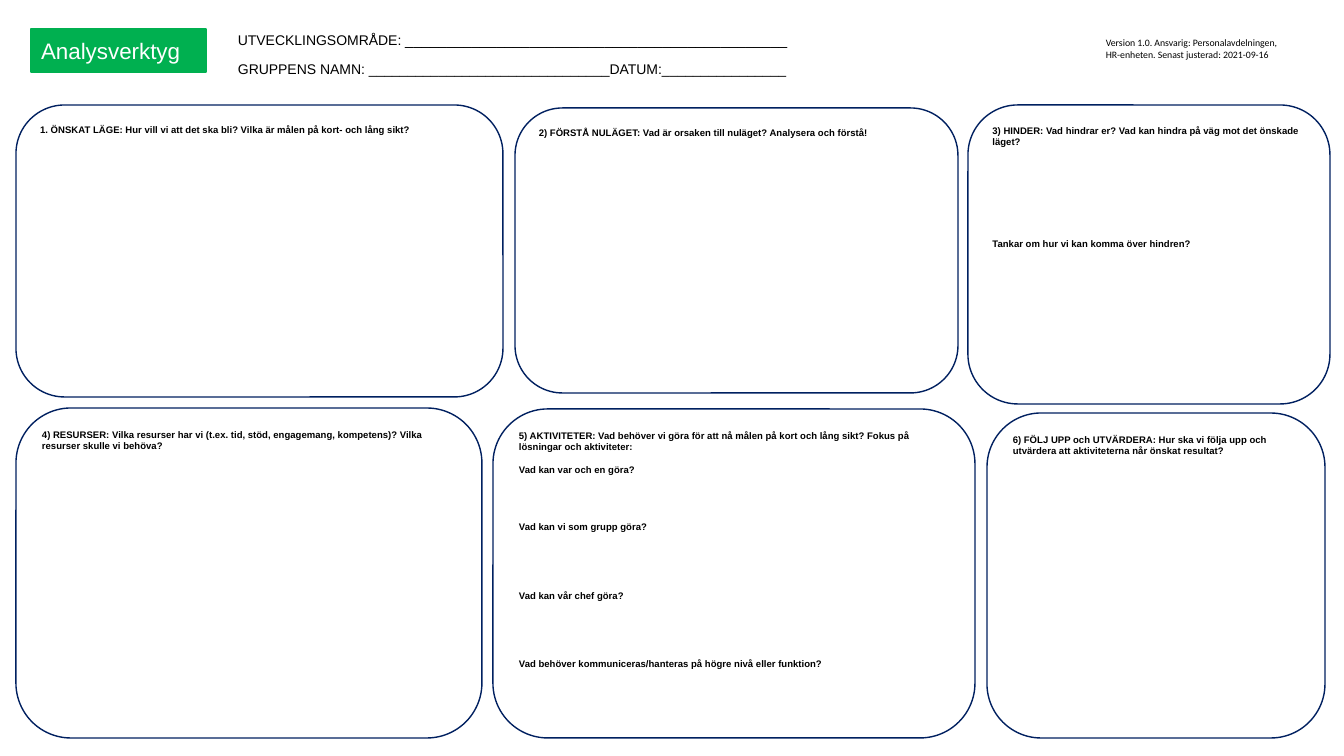
import pptx
import pptx.util
import pptx.dml.color
import pptx.enum.shapes
import pptx.enum.text
import pptx.oxml

SHAPE = pptx.enum.shapes.MSO_SHAPE
ALIGN = pptx.enum.text.PP_ALIGN
ANCHOR = pptx.enum.text.MSO_ANCHOR
FIT = pptx.enum.text.MSO_AUTO_SIZE
ROUND = (
    '<a:prstGeom xmlns:a="http://schemas.openxmlformats.org/drawingml/2006/main" '
    'prst="roundRect"><a:avLst/></a:prstGeom>'
)


def px(n):
    return pptx.util.Emu(round(n * 914400 / 100.8))


def tint(code):
    return pptx.dml.color.RGBColor.from_string(code)


def apply(item, style):
    for name, value in style.items():
        setattr(item, name, value)


class Sheet:
    head = {"name": "Arial", "size": pptx.util.Pt(16)}
    body = {"name": "Arial", "size": pptx.util.Pt(6.8), "bold": True}
    note = {"name": "Calibri", "size": pptx.util.Pt(7)}
    field = {"name": "Arial", "size": pptx.util.Pt(10)}
    ink, white, navy, green = "000000", "FFFFFF", "002060", "00B050"

    def __init__(self, deck):
        self.slide = deck.slides.add_slide(deck.slide_layouts[5])

    def paint(self, shape, fill, line=None):
        shape.fill.solid()
        shape.fill.fore_color.rgb = tint(fill)
        if line:
            shape.line.color.rgb = tint(line)
            shape.line.width = pptx.util.Pt(1)
        else:
            shape.line.fill.background()

    def words(self, para, text, font, color):
        run = para.add_run()
        run.text = text
        apply(run.font, font)
        run.font.color.rgb = tint(color)

    def title(self, area, text):
        shape = self.slide.shapes.title
        apply(shape, dict(zip(("left", "top", "width", "height"), map(px, area))))
        shape.element.spPr.append(pptx.oxml.parse_xml(ROUND))
        self.paint(shape, self.green, self.green)
        apply(shape.text_frame, {"vertical_anchor": ANCHOR.MIDDLE, "auto_size": FIT.NONE})
        para = shape.text_frame.paragraphs[0]
        para.alignment = ALIGN.LEFT
        self.words(para, text, self.head, self.white)

    def card(self, area, parts):
        shape = self.slide.shapes.add_shape(SHAPE.ROUNDED_RECTANGLE, *map(px, area))
        shape.shadow.inherit = False
        self.paint(shape, self.white, self.navy)
        frame = shape.text_frame
        apply(frame, {"word_wrap": True, "vertical_anchor": ANCHOR.TOP})
        for i, (gap, text) in enumerate(parts):
            para = frame.add_paragraph() if i else frame.paragraphs[0]
            para.alignment = ALIGN.LEFT
            if gap:
                para.space_before = px(gap)
            self.words(para, text, self.body, self.ink)

    def stamp(self, area, lines):
        shape = self.slide.shapes.add_textbox(*map(px, area))
        self.paint(shape, self.white)
        shape.text_frame.word_wrap = True
        para = shape.text_frame.paragraphs[0]
        for i, text in enumerate(lines):
            if i:
                para.add_line_break()
            self.words(para, text, self.note, self.ink)

    def blank(self, area, runs):
        shape = self.slide.shapes.add_textbox(*map(px, area))
        apply(shape.text_frame, {"word_wrap": False, "auto_size": FIT.SHAPE_TO_FIT_TEXT})
        for text, size in runs:
            font = {**self.field, "size": pptx.util.Pt(size)}
            self.words(shape.text_frame.paragraphs[0], text, font, self.ink)


CARDS = [
    ((16, 105, 487, 292), [
        (0, "1. ÖNSKAT LÄGE: Hur vill vi att det ska bli? Vilka är målen på kort- och lång sikt?"),
    ]),
    ((515, 108, 443, 285), [
        (0, "2) FÖRSTÅ NULÄGET: Vad är orsaken till nuläget? Analysera och förstå!"),
    ]),
    ((968, 105, 362, 299), [
        (0, "3) HINDER: Vad hindrar er? Vad kan hindra på väg mot det önskade läget?"),
        (91, "Tankar om hur vi kan komma över hindren?"),
    ]),
    ((16, 408, 466, 330), [
        (0, "4) RESURSER: Vilka resurser har vi (t.ex. tid, stöd, engagemang, kompetens)? "
            "Vilka resurser skulle vi behöva?"),
    ]),
    ((493, 409, 482, 329), [
        (0, "5) AKTIVITETER: Vad behöver vi göra för att nå målen på kort och lång sikt? "
            "Fokus på lösningar och aktiviteter:"),
        (11, "Vad kan var och en göra?"),
        (46, "Vad kan vi som grupp göra?"),
        (57, "Vad kan vår chef göra?"),
        (57, "Vad behöver kommuniceras/hanteras på högre nivå eller funktion?"),
    ]),
    ((987, 413, 338, 325), [
        (0, "6) FÖLJ UPP och UTVÄRDERA: Hur ska vi följa upp och utvärdera att "
            "aktiviteterna når önskat resultat?"),
    ]),
]


def main():
    deck = pptx.Presentation()
    apply(deck, {"slide_width": px(1344), "slide_height": px(756)})
    sheet = Sheet(deck)
    sheet.title((31, 29, 175, 43), "Analysverktyg")
    for area, parts in CARDS:
        sheet.card(area, parts)
    sheet.stamp((1096, 32, 237, 39), [
        "Version 1.0. Ansvarig: Personalavdelningen,",
        "HR-enheten. Senast justerad: 2021-09-16",
    ])
    sheet.blank((228, 26, 571, 28), [("UTVECKLINGSOMRÅDE: ", 10), ("_" * 46, 10.7)])
    sheet.blank((228, 56, 580, 27), [
        ("GRUPPENS NAMN: " + "_" * 31 + "DATUM:" + "_" * 16, 10),
    ])
    deck.save("out.pptx")


if __name__ == "__main__":
    main()
